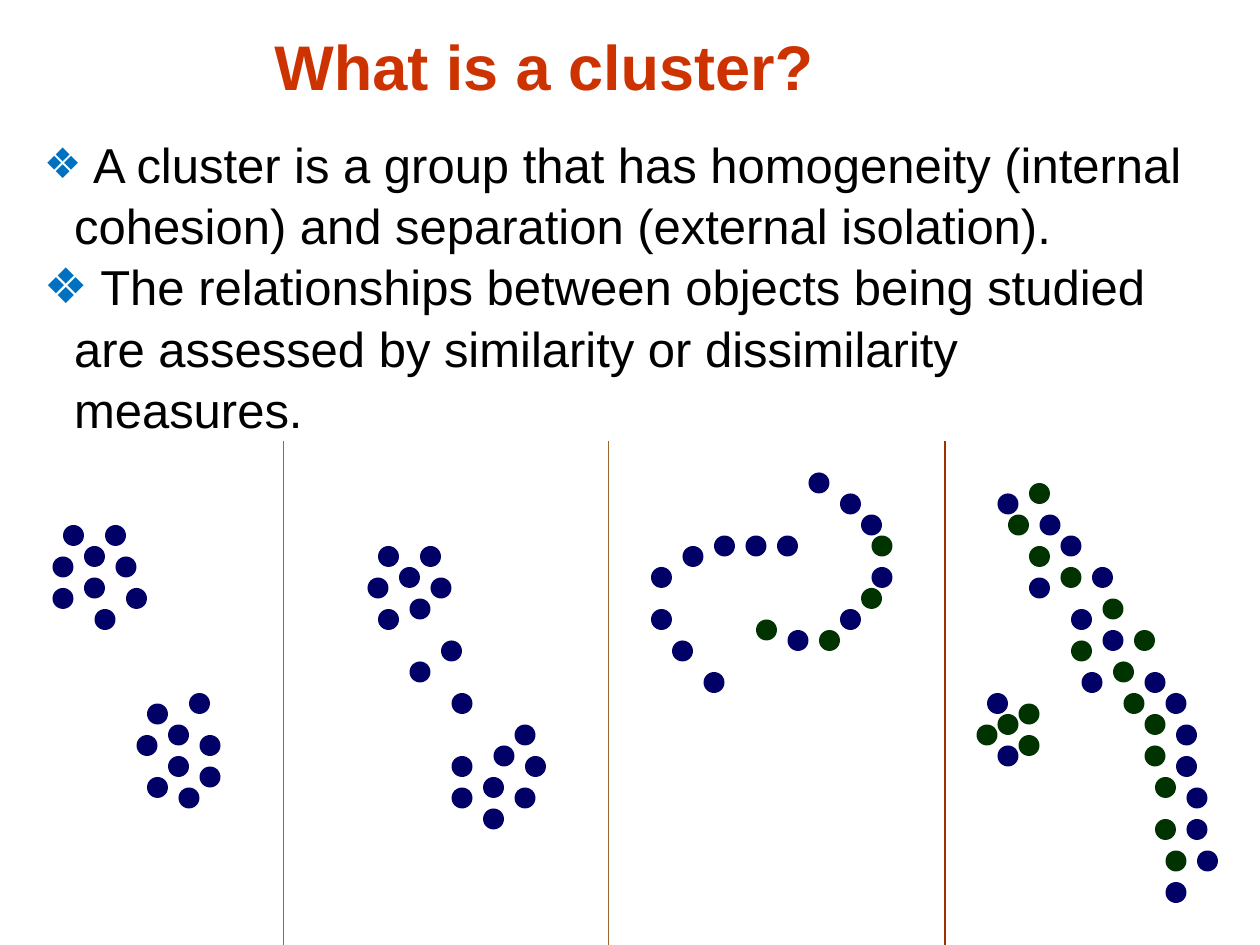
"""Build a slide that defines a cluster and shows four kinds of point clusters."""
from typing import NamedTuple

from lxml.etree import SubElement
from pptx import Presentation
from pptx.dml.color import RGBColor
from pptx.enum.shapes import MSO_CONNECTOR as Connector, MSO_SHAPE as Shape
from pptx.enum.text import MSO_AUTO_SIZE as AutoSize
from pptx.oxml.ns import qn
from pptx.util import Inches, Pt

COLORS = {
    "title": "CC3300",
    "text": "000000",
    "bullet": "0070C0",
    "navy": "000066",
    "green": "003300",
    "tan": "996633",
    "rust": "993300",
}
FONT = "Arial"
GRID = 1 / 12
DOT_SIZE = 2 * GRID


class TextRun(NamedTuple):
    text: str
    size: int
    color: str = "text"
    bold: bool = False


class Cluster(NamedTuple):
    color: str
    cells: list[tuple[int, int]]


class Divider(NamedTuple):
    left: float
    color: str


TITLE = TextRun("What is a cluster?", 36, "title", True)
BULLETS = [
    [
        TextRun(" ", 24),
        TextRun("A cluster is a group that has homogeneity (internal cohesion) "
                "and separation (external isolation).", 28),
    ],
    [
        TextRun(" The relationships between objects being studied are assessed "
                "by similarity or dissimilarity measures.", 28),
    ],
]
DIVIDERS = [Divider(2.25, "tan"), Divider(4.83, "tan"), Divider(7.5, "rust")]
CLUSTERS = [
    Cluster("navy", [(6, 50), (10, 50), (8, 52), (5, 53), (11, 53), (8, 55),
                     (5, 56), (12, 56), (9, 58)]),
    Cluster("navy", [(18, 66), (14, 67), (16, 69), (13, 70), (19, 70), (16, 72),
                     (19, 73), (14, 74), (17, 75)]),
    Cluster("navy", [(36, 52), (40, 52), (38, 54), (35, 55), (41, 55), (39, 57),
                     (36, 58), (42, 61), (39, 63), (43, 66)]),
    Cluster("navy", [(49, 69), (47, 71), (43, 72), (50, 72), (46, 74), (43, 75),
                     (49, 75), (46, 77)]),
    Cluster("navy", [(74, 51), (71, 51), (68, 51), (65, 52), (62, 54), (62, 58),
                     (64, 61), (67, 64)]),
    Cluster("navy", [(77, 45), (80, 47), (82, 49), (83, 54), (80, 58), (75, 60)]),
    Cluster("green", [(83, 51), (82, 56), (78, 60), (72, 59)]),
    Cluster("navy", [(95, 47), (99, 49), (101, 51), (104, 54), (98, 55), (102, 58),
                     (105, 60), (103, 64), (109, 64), (111, 66), (112, 69), (112, 72),
                     (113, 75), (113, 78), (114, 81), (111, 84)]),
    Cluster("green", [(98, 46), (96, 49), (98, 52), (101, 54), (105, 57), (108, 60),
                      (102, 61), (106, 63), (107, 66), (109, 68), (109, 71), (110, 74),
                      (110, 78), (111, 81)]),
    Cluster("navy", [(94, 66), (95, 71)]),
    Cluster("green", [(97, 67), (95, 68), (93, 69), (97, 70)]),
]


def rgb(name: str) -> RGBColor:
    """Return the named colour."""
    return RGBColor.from_string(COLORS[name])


def add_text_frame(slide, left: float, top: float, width: float, height: float, wrap: bool):
    """Add a text box that grows with its text and return its frame."""
    box = slide.shapes.add_textbox(Inches(left), Inches(top), Inches(width), Inches(height))
    box.text_frame.word_wrap = wrap
    box.text_frame.auto_size = AutoSize.SHAPE_TO_FIT_TEXT
    return box.text_frame


def add_run(paragraph, text_run: TextRun) -> None:
    """Append one formatted run."""
    run = paragraph.add_run()
    run.text = text_run.text
    run.font.name = FONT
    run.font.size = Pt(text_run.size)
    run.font.bold = text_run.bold
    run.font.color.rgb = rgb(text_run.color)


def set_bullet(paragraph) -> None:
    """Give a paragraph a coloured diamond bullet with a hanging indent."""
    paragraph.line_spacing = 1.04
    properties = paragraph._p.get_or_add_pPr()
    properties.set("marL", str(Inches(0.24)))
    properties.set("indent", str(-Inches(0.24)))
    color = SubElement(properties, qn("a:buClr"))
    SubElement(color, qn("a:srgbClr"), val=COLORS["bullet"])
    SubElement(properties, qn("a:buFont"), typeface=FONT)
    SubElement(properties, qn("a:buChar"), char="❖")


def add_divider(slide, divider: Divider) -> None:
    """Draw a vertical line between two panels."""
    left = Inches(divider.left)
    line = slide.shapes.add_connector(
        Connector.STRAIGHT, left, Inches(3.5), left, Inches(7.5))
    line.line.color.rgb = rgb(divider.color)
    line.line.width = Pt(0.75)
    SubElement(line._element.spPr, qn("a:effectLst"))


def add_cluster(slide, cluster: Cluster) -> None:
    """Draw a dot at each grid cell of a cluster."""
    for column, row in cluster.cells:
        dot = slide.shapes.add_shape(
            Shape.OVAL, Inches(column * GRID), Inches(row * GRID),
            Inches(DOT_SIZE), Inches(DOT_SIZE))
        dot.shadow.inherit = False
        dot.fill.solid()
        dot.fill.fore_color.rgb = rgb(cluster.color)
        dot.line.fill.background()


def main() -> None:
    """Build and save the slide."""
    presentation = Presentation()
    presentation.slide_width, presentation.slide_height = Inches(10), Inches(7.5)
    slide = presentation.slides.add_slide(presentation.slide_layouts[6])

    title = add_text_frame(slide, 2.08, 0.17, 4.52, 0.71, wrap=False)
    add_run(title.paragraphs[0], TITLE)

    body = add_text_frame(slide, 0.25, 1, 9.33, 1.99, wrap=True)
    for index, text_runs in enumerate(BULLETS):
        paragraph = body.add_paragraph() if index else body.paragraphs[0]
        set_bullet(paragraph)
        for text_run in text_runs:
            add_run(paragraph, text_run)

    for divider in DIVIDERS:
        add_divider(slide, divider)
    for cluster in CLUSTERS:
        add_cluster(slide, cluster)

    presentation.save("out.pptx")


if __name__ == "__main__":
    main()
